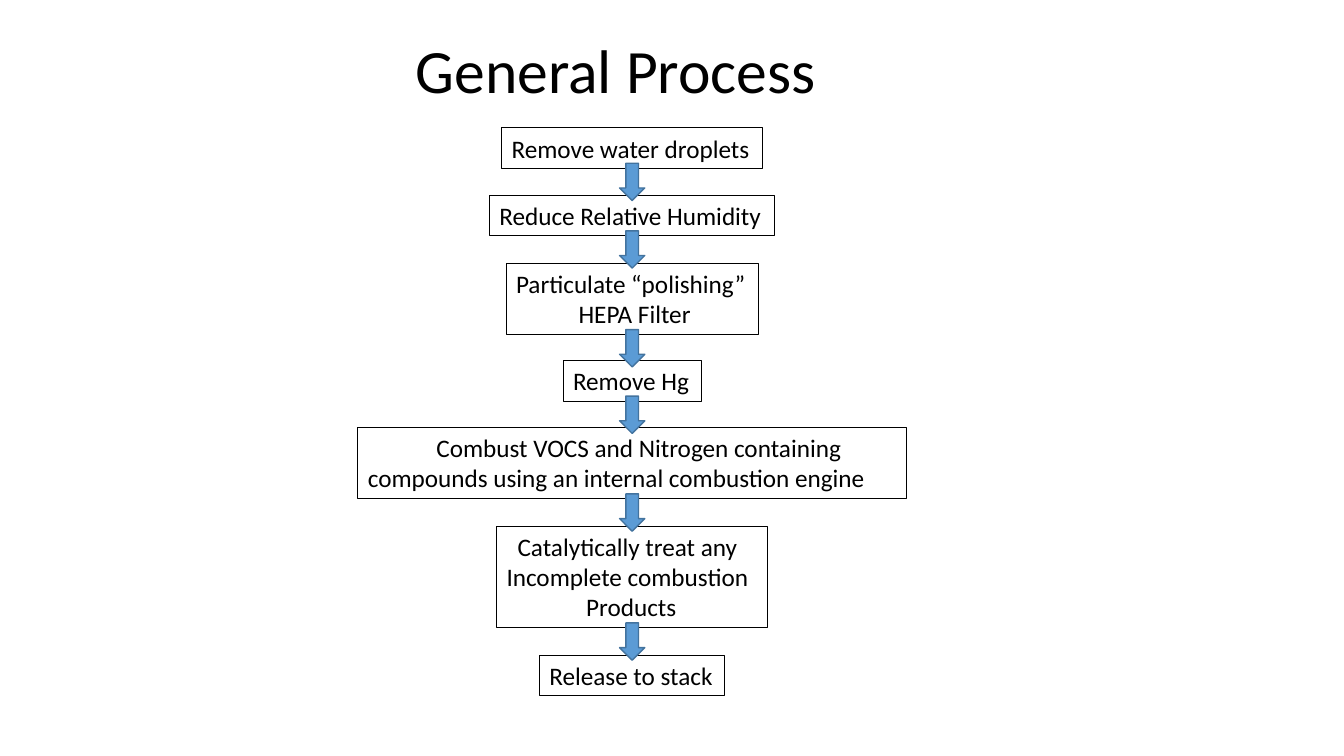
from pptx import Presentation
from pptx.dml.color import RGBColor
from pptx.enum.shapes import MSO_SHAPE as Shape
from pptx.enum.text import MSO_ANCHOR as Anchor, PP_ALIGN as Align
from pptx.util import Inches, Pt

FONT = "Calibri"
CENTER = 6.27
ARROW_WIDTH, ARROW_HEIGHT, ARROW_OVERLAP = 0.25, 0.37, 0.05
BOX_HEIGHTS = {1: 0.4, 2: 0.71, 3: 1.01}

STEPS = [
    (1.27, 2.59, 1, [("Remove water droplets", 0)]),
    (1.94, 2.83, 1, [("Reduce Relative Humidity", 0)]),
    (2.61, 2.5, 2, [("Particulate “polishing”", 0), ("HEPA Filter", 0.62)]),
    (3.58, 1.37, 1, [("Remove Hg", 0)]),
    (4.24, 5.44, 2, [("Combust VOCS and Nitrogen containing compounds "
                      "using an internal combustion engine", 0.68)]),
    (5.22, 2.69, 3, [("Catalytically treat any", 0.11),
                     ("Incomplete combustion", 0), ("Products", 0.79)]),
    (6.5, 1.84, 1, [("Release to stack", 0)]),
]


def color(value):
    return RGBColor.from_string(value)


def apply_format(target, values):
    for name, value in values.items():
        setattr(target, name, value)


def format_font(font, size):
    apply_format(font, {"name": FONT, "size": Pt(size), "bold": False})
    font.color.rgb = color("000000")


def place(shape, left, top, width, height):
    apply_format(shape, {"left": Inches(left), "top": Inches(top),
                         "width": Inches(width), "height": Inches(height)})


def set_title(slide, text):
    title = slide.shapes.title
    place(title, 0.36, 0, 11.5, 1.45)
    title.text_frame.text = text
    title.text_frame.vertical_anchor = Anchor.MIDDLE
    paragraph = title.text_frame.paragraphs[0]
    apply_format(paragraph, {"alignment": Align.CENTER, "line_spacing": 0.9})
    format_font(paragraph.runs[0].font, 44)


def add_centered_shape(slide, kind, top, width, height, line, line_width):
    shape = slide.shapes.add_shape(
        kind, Inches(CENTER - width / 2), Inches(top), Inches(width), Inches(height))
    shape.shadow.inherit = False
    shape.line.color.rgb = color(line)
    shape.line.width = Pt(line_width)
    return shape


def add_step(slide, top, width, height, lines):
    box = add_centered_shape(slide, Shape.RECTANGLE, top, width, height, "000000", 0.75)
    box.fill.background()
    frame = box.text_frame
    apply_format(frame, {"word_wrap": True, "vertical_anchor": Anchor.TOP,
                         "margin_left": Inches(0.1), "margin_right": 0,
                         "margin_top": Inches(0.05), "margin_bottom": Inches(0.05)})
    for index, (text, indent) in enumerate(lines):
        paragraph = frame.add_paragraph() if index else frame.paragraphs[0]
        paragraph.text = text
        paragraph.alignment = Align.LEFT
        paragraph._p.get_or_add_pPr().set("indent", str(Inches(indent)))
        format_font(paragraph.runs[0].font, 18)


def add_arrow(slide, top):
    arrow = add_centered_shape(slide, Shape.DOWN_ARROW, top, ARROW_WIDTH,
                               ARROW_HEIGHT, "43739E", 1)
    arrow.fill.solid()
    arrow.fill.fore_color.rgb = color("5B9BD5")


def main():
    presentation = Presentation()
    apply_format(presentation, {"slide_width": Inches(13.33),
                                "slide_height": Inches(7.5)})
    slide = presentation.slides.add_slide(presentation.slide_layouts[5])
    set_title(slide, "General Process")
    for top, width, line_count, lines in STEPS:
        add_step(slide, top, width, BOX_HEIGHTS[line_count], lines)
    for top, _, line_count, _ in STEPS[:-1]:
        add_arrow(slide, top + BOX_HEIGHTS[line_count] - ARROW_OVERLAP)
    presentation.save("out.pptx")


if __name__ == "__main__":
    main()
